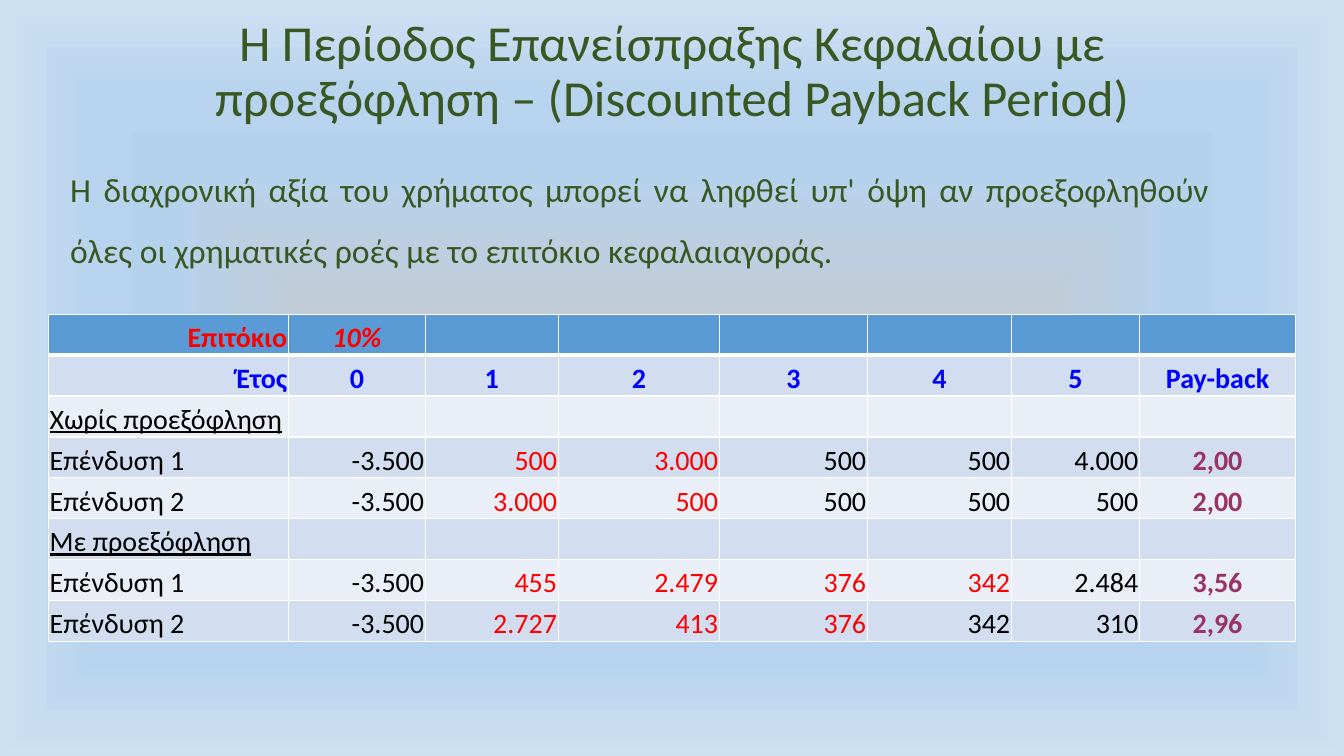
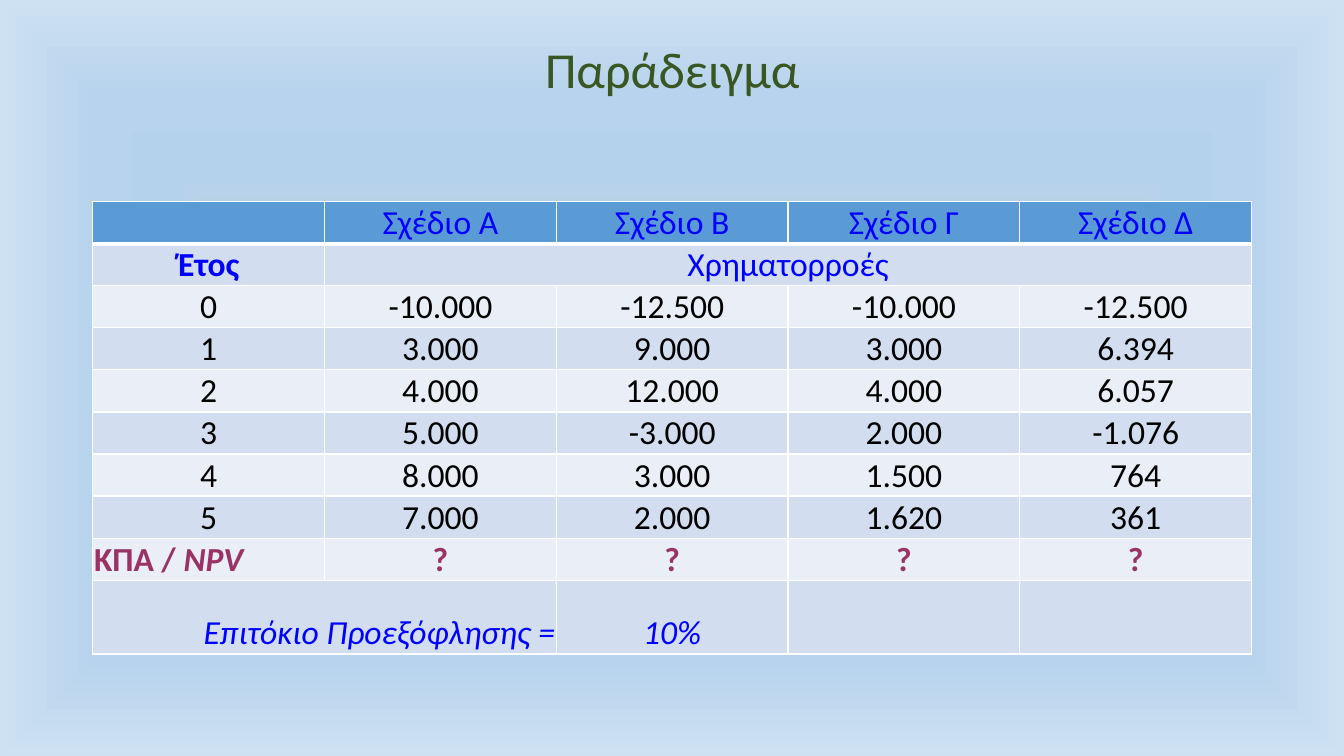
from pptx import Presentation
from pptx.dml.color import RGBColor
from pptx.enum.text import MSO_ANCHOR, PP_ALIGN
from pptx.oxml import parse_xml
from pptx.oxml.ns import nsdecls
from pptx.util import Cm, Pt

FONT = "Calibri"
GREEN = RGBColor(0x38, 0x57, 0x23)
RED = RGBColor(0xFF, 0x00, 0x00)
BLUE = RGBColor(0x00, 0x00, 0xFF)
PLUM = RGBColor(0x99, 0x33, 0x66)
BLACK = RGBColor(0x00, 0x00, 0x00)
WHITE = RGBColor(0xFF, 0xFF, 0xFF)
HEAD = RGBColor(0x5B, 0x9B, 0xD5)
BANDS = (RGBColor(0xEA, 0xEF, 0xF7), RGBColor(0xD2, 0xDE, 0xEF))
LEFT, MID, RIGHT = PP_ALIGN.LEFT, PP_ALIGN.CENTER, PP_ALIGN.RIGHT

# Background: gradient stops as percent and colour
STOPS = [(0, "C9C9C9"), (36, "BBCFE1"), (45, "B8D1E7"), (54, "B5D2EC"),
         (61, "B5D2EC"), (65, "B5D2EC"), (75, "B7D3ED"), (100, "CEE1F2")]

# Slide 1: payback with discounting
PAY_TITLE = "Η Περίοδος Επανείσπραξης Κεφαλαίου με προεξόφληση – (Discounted Payback Period)"
PAY_TEXT = ("Η διαχρονική αξία του χρήματος μπορεί να ληφθεί υπ' όψη αν προεξοφληθούν "
            "όλες οι χρηματικές ροές με το επιτόκιο κεφαλαιαγοράς.")
PAY_COLS = [6.05, 3.45, 3.35, 4.06, 3.73, 3.63, 3.23, 3.93]
PAY_ROWS = [
    ["Επιτόκιο", "10%"],
    ["Έτος", "0", "1", "2", "3", "4", "5", "Pay-back"],
    ["Χωρίς προεξόφληση"],
    ["Επένδυση 1", "-3.500", "500", "3.000", "500", "500", "4.000", "2,00"],
    ["Επένδυση 2", "-3.500", "3.000", "500", "500", "500", "500", "2,00"],
    ["Με προεξόφληση"],
    ["Επένδυση 1", "-3.500", "455", "2.479", "376", "342", "2.484", "3,56"],
    ["Επένδυση 2", "-3.500", "2.727", "413", "376", "342", "310", "2,96"],
]
# Last red column of each investment row
RED_END = {3: 3, 4: 3, 6: 5, 7: 4}

# Slide 2: example
PLAN_TITLE = "Παράδειγμα"
PLAN_ROWS = [
    ["", "Σχέδιο A", "Σχέδιο Β", "Σχέδιο Γ", "Σχέδιο Δ"],
    ["Έτος", "Χρηματορροές"],
    ["0", "-10.000", "-12.500", "-10.000", "-12.500"],
    ["1", "3.000", "9.000", "3.000", "6.394"],
    ["2", "4.000", "12.000", "4.000", "6.057"],
    ["3", "5.000", "-3.000", "2.000", "-1.076"],
    ["4", "8.000", "3.000", "1.500", "764"],
    ["5", "7.000", "2.000", "1.620", "361"],
    ["ΚΠΑ / ", "?", "?", "?", "?"],
    ["Επιτόκιο Προεξόφλησης =", "", "10%"],
]
NPV, RATE = 8, 9


def paint(master):
    stops = "".join(f'<a:gs pos="{pos * 1000}"><a:srgbClr val="{color}"/></a:gs>'
                    for pos, color in STOPS)
    grad = parse_xml(
        f'<a:gradFill {nsdecls("a")} rotWithShape="1"><a:gsLst>{stops}</a:gsLst>'
        '<a:path path="shape"><a:fillToRect l="50000" t="50000" r="50000" b="50000"/>'
        '</a:path></a:gradFill>')
    master.background.fill.solid()
    back = master.element.xpath("p:cSld/p:bg/p:bgPr")[0]
    back.replace(back[0], grad)


def write(slide, text, box, size, align, space, anchor=MSO_ANCHOR.TOP, before=0):
    frame = slide.shapes.add_textbox(*map(Cm, box)).text_frame
    frame.word_wrap = True
    frame.vertical_anchor = anchor
    para = frame.paragraphs[0]
    para.text = text
    para.alignment, para.line_spacing, para.space_before = align, space, Pt(before)
    para.font.name, para.font.size, para.font.color.rgb = FONT, Pt(size), GREEN


def start(deck, title):
    slide = deck.slides.add_slide(deck.slide_layouts[6])
    write(slide, title, (2.34, 0, 29.21, 3.66), 36, MID, 0.9, MSO_ANCHOR.MIDDLE)
    return slide


def border(cell, row):
    # The rule under the header row is thicker
    wide = {"T": 3 if row == 1 else 1, "B": 3 if row == 0 else 1}
    for spot, side in enumerate("LRTB"):
        line = parse_xml(
            f'<a:ln{side} {nsdecls("a")} w="{Pt(wide.get(side, 1))}"><a:solidFill>'
            f'<a:srgbClr val="{WHITE}"/></a:solidFill></a:ln{side}>')
        cell._tc.get_or_add_tcPr().insert(spot, line)


def grid(slide, rows, place, widths, heights, size, style):
    table = slide.shapes.add_table(len(rows), len(widths), *map(Cm, place),
                                   Cm(sum(widths)), Cm(sum(heights))).table
    for col, width in zip(table.columns, widths):
        col.width = Cm(width)
    for r, (texts, height) in enumerate(zip(rows, heights)):
        table.rows[r].height = Cm(height)
        for c in range(len(widths)):
            cell = table.cell(r, c)
            cell.fill.solid()
            cell.fill.fore_color.rgb = BANDS[r % 2] if r else HEAD
            border(cell, r)
            cell.vertical_anchor = MSO_ANCHOR.BOTTOM
            cell.margin_left = cell.margin_right = cell.margin_top = Cm(0.03)
            cell.margin_bottom = 0
            para = cell.text_frame.paragraphs[0]
            para.font.name, para.font.size = FONT, Pt(size)
            if c < len(texts) and texts[c]:
                para.text = texts[c]
                look = style(r, c)
                para.alignment = look["align"]
                font = para.font
                font.color.rgb = look.get("color", BLACK)
                font.bold = look.get("bold", False)
                font.italic = look.get("italic", False)
                font.underline = look.get("line", False)
    return table


def pay(r, c):
    if r < 2:
        return dict(align=MID if c else RIGHT, color=BLUE if r else RED,
                    bold=True, italic=(r, c) == (0, 1))
    if c == 0:
        return dict(align=LEFT, line=r not in RED_END)
    if c == len(PAY_COLS) - 1:
        return dict(align=MID, color=PLUM, bold=True)
    return dict(align=RIGHT, color=RED if 2 <= c <= RED_END[r] else BLACK)


def plan(r, c):
    if r < 2:
        return dict(align=MID, color=BLUE, bold=(r, c) == (1, 0))
    if r == NPV:
        return dict(align=MID if c else LEFT, color=PLUM, bold=True)
    if r == RATE:
        return dict(align=MID if c else RIGHT, color=BLUE, italic=True)
    return dict(align=MID)


def main():
    deck = Presentation()
    deck.slide_width, deck.slide_height = Cm(33.87), Cm(19.05)
    paint(deck.slide_master)

    # Payback table
    slide = start(deck, PAY_TITLE)
    grid(slide, PAY_ROWS, (1.22, 7.92), PAY_COLS, [1.03] * len(PAY_ROWS), 20, pay)
    write(slide, PAY_TEXT, (1.52, 3.63, 29.21, 3.53), 24, PP_ALIGN.JUSTIFY, 1.5, before=10)

    # Project cash flows
    slide = start(deck, PLAN_TITLE)
    table = grid(slide, PLAN_ROWS, (2.34, 5.08), [5.84] * 5, [1.06] * RATE + [1.86],
                 24, plan)
    table.cell(1, 1).merge(table.cell(1, 4))
    table.cell(RATE, 0).merge(table.cell(RATE, 1))
    run = table.cell(NPV, 0).text_frame.paragraphs[0].add_run()
    run.text, run.font.italic = "NPV", True

    deck.save("out.pptx")


if __name__ == "__main__":
    main()
